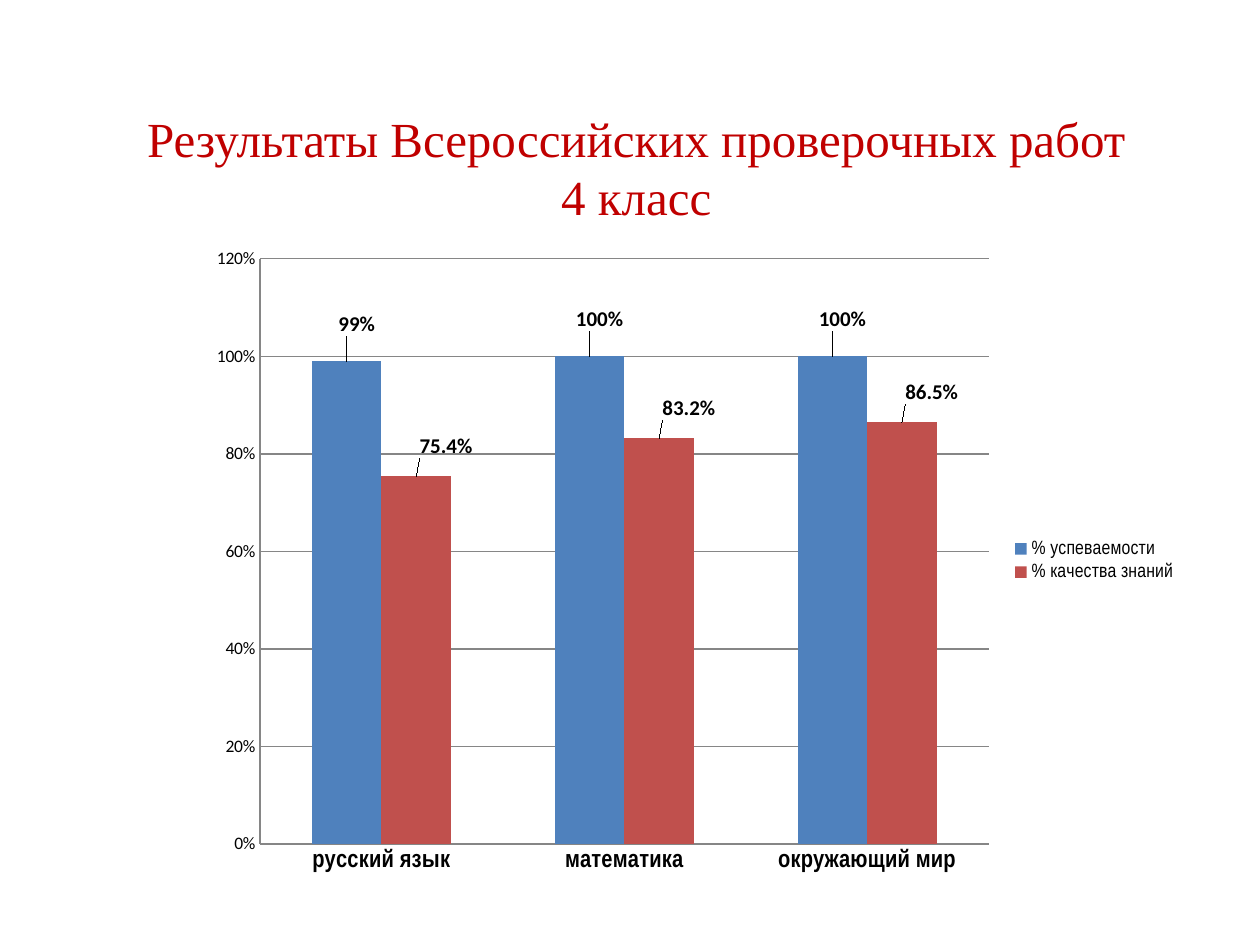
import pptx
import pptx.util
import pptx.chart.data
import pptx.dml.color
import pptx.enum.chart
import pptx.enum.text
import pptx.oxml

Pt = pptx.util.Pt
RGBColor = pptx.dml.color.RGBColor

CRIMSON = RGBColor(0xC0, 0x00, 0x00)
BLACK = RGBColor(0x00, 0x00, 0x00)
WHITE = RGBColor(0xFF, 0xFF, 0xFF)
GREY = RGBColor(0x86, 0x86, 0x86)
BLUE = RGBColor(0x4F, 0x81, 0xBD)
RED = RGBColor(0xC0, 0x50, 0x4D)

TITLE = "Результаты Всероссийских проверочных работ\v4 класс"
SUBJECTS = ["русский язык", "математика", "окружающий мир"]
MEASURES = [
    {"name": "% успеваемости", "values": [0.99, 1, 1], "color": BLUE, "format": "0%",
     "label_shifts": [(0.01, -0.03), (0.01, -0.03), (0.01, -0.03)]},
    {"name": "% качества знаний", "values": [0.754, 0.832, 0.865], "color": RED, "format": "0.0%",
     "label_shifts": [(0.03, -0.02), (0.03, -0.02), (0.03, -0.02)]},
]
TITLE_BOX = (39.6, 50.4, 648, 90)
CHART_BOX = (112.3, 134.6, 568, 371.5)
PLOT_AREA = {"x": 0.064, "y": 0.036, "w": 0.733, "h": 0.9}
CHART_NS = 'xmlns:c="http://schemas.openxmlformats.org/drawingml/2006/chart"'


def set_font(font, size, name="Calibri", bold=False, color=BLACK):
    font.size = Pt(size)
    font.name = name
    font.bold = bold
    font.color.rgb = color


def add_text(slide, text, box, **font_format):
    frame = slide.shapes.add_textbox(*map(Pt, box)).text_frame
    frame.word_wrap = True
    frame.vertical_anchor = pptx.enum.text.MSO_ANCHOR.MIDDLE
    paragraph = frame.paragraphs[0]
    paragraph.text = text
    paragraph.alignment = pptx.enum.text.PP_ALIGN.CENTER
    for run in paragraph.runs:
        set_font(run.font, **font_format)


def manual_layout(places, prefix=""):
    parts = "".join(f'<c:{key} val="{value}"/>' for key, value in places.items())
    return pptx.oxml.parse_xml(
        f"<c:layout {CHART_NS}><c:manualLayout>{prefix}{parts}</c:manualLayout></c:layout>")


def place_plot(chart):
    plot_area = chart._chartSpace.chart.plotArea
    for old in plot_area.xpath("c:layout"):
        plot_area.remove(old)
    modes = ('<c:layoutTarget val="inner"/><c:xMode val="edge"/><c:yMode val="edge"/>')
    plot_area.insert(0, manual_layout(PLOT_AREA, modes))


def style_series(series, measure):
    series.format.fill.solid()
    series.format.fill.fore_color.rgb = measure["color"]
    series.invert_if_negative = False
    labels = series.data_labels
    labels.show_value = True
    labels.number_format = measure["format"]
    labels.number_format_is_linked = False
    set_font(labels.font, 12, bold=True)
    for index, (x, y) in enumerate(measure["label_shifts"]):
        label = series.points[index].data_label
        set_font(label.font, 12, bold=True)
        label.position = pptx.enum.chart.XL_LABEL_POSITION.OUTSIDE_END
        idx = series._element.xpath(f'c:dLbls/c:dLbl/c:idx[@val="{index}"]')[0]
        idx.addnext(pptx.oxml.parse_xml(
            f'<c:numFmt {CHART_NS} formatCode="{measure["format"]}" sourceLinked="0"/>'))
        idx.addnext(manual_layout({"x": x, "y": y}))


def style_axis(axis, **font_format):
    axis.major_tick_mark = pptx.enum.chart.XL_TICK_MARK.NONE
    axis.minor_tick_mark = pptx.enum.chart.XL_TICK_MARK.NONE
    axis.format.line.color.rgb = GREY
    axis.format.line.width = Pt(0.75)
    set_font(axis.tick_labels.font, **font_format)


def add_results_chart(slide):
    results = pptx.chart.data.CategoryChartData(number_format="0%")
    results.categories = SUBJECTS
    for measure in MEASURES:
        results.add_series(measure["name"], measure["values"], measure["format"])
    chart = slide.shapes.add_chart(
        pptx.enum.chart.XL_CHART_TYPE.COLUMN_CLUSTERED, *map(Pt, CHART_BOX), results).chart
    set_font(chart.font, 10)
    chart.has_title = False
    plot = chart.plots[0]
    plot.gap_width = 150
    plot.overlap = 0
    plot.vary_by_categories = False
    for series, measure in zip(plot.series, MEASURES):
        style_series(series, measure)
    style_axis(chart.category_axis, size=14, name="Arial Narrow", bold=True)
    percent_axis = chart.value_axis
    style_axis(percent_axis, size=10)
    percent_axis.minimum_scale = 0
    percent_axis.maximum_scale = 1.2
    percent_axis.major_unit = 0.2
    percent_axis.tick_labels.number_format = "0%"
    percent_axis.tick_labels.number_format_is_linked = False
    percent_axis.has_major_gridlines = True
    percent_axis.major_gridlines.format.line.color.rgb = GREY
    percent_axis.major_gridlines.format.line.width = Pt(0.75)
    chart.has_legend = True
    chart.legend.position = pptx.enum.chart.XL_LEGEND_POSITION.RIGHT
    chart.legend.include_in_layout = False
    set_font(chart.legend.font, 11, name="Arial Narrow")
    place_plot(chart)


def main():
    presentation = pptx.Presentation()
    presentation.slide_width = Pt(720)
    presentation.slide_height = Pt(540)
    slide = presentation.slides.add_slide(presentation.slide_layouts[6])
    slide.background.fill.solid()
    slide.background.fill.fore_color.rgb = WHITE
    add_text(slide, TITLE, TITLE_BOX, size=28, name="Times New Roman", color=CRIMSON)
    add_results_chart(slide)
    presentation.save("out.pptx")


if __name__ == "__main__":
    main()
